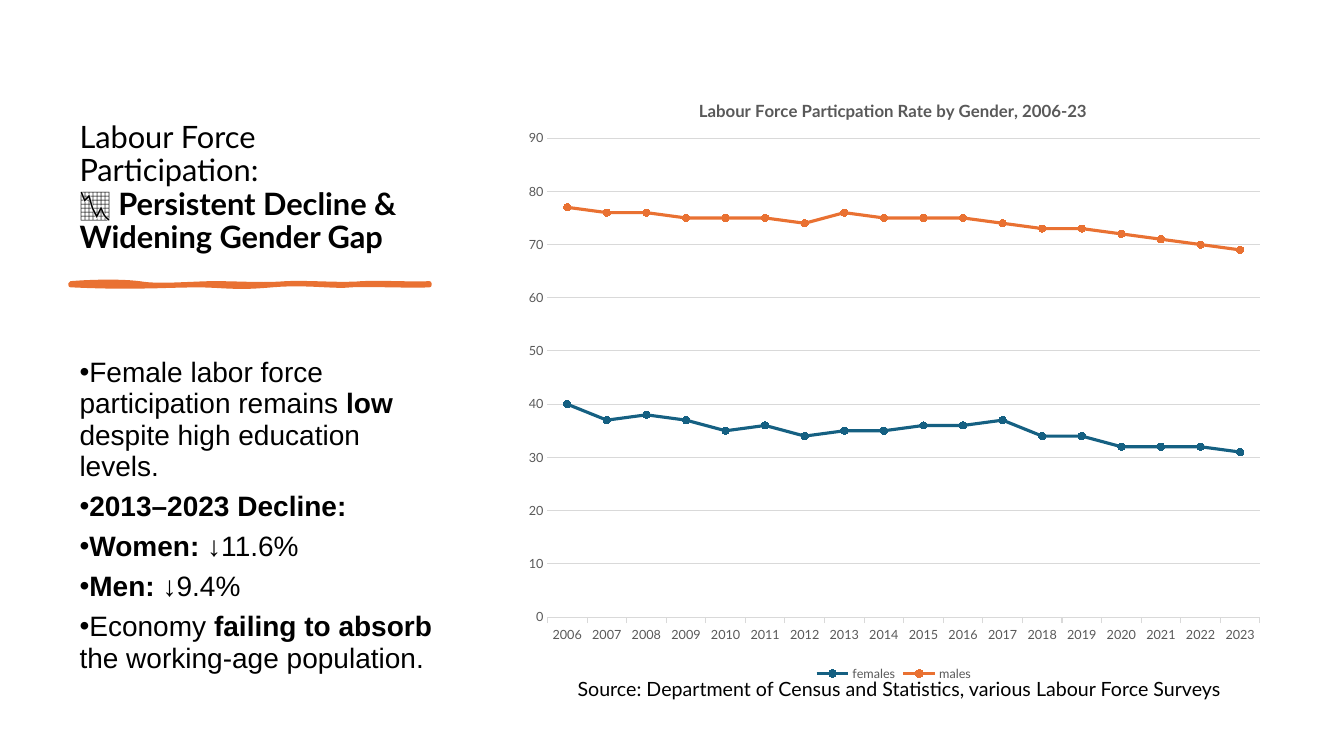
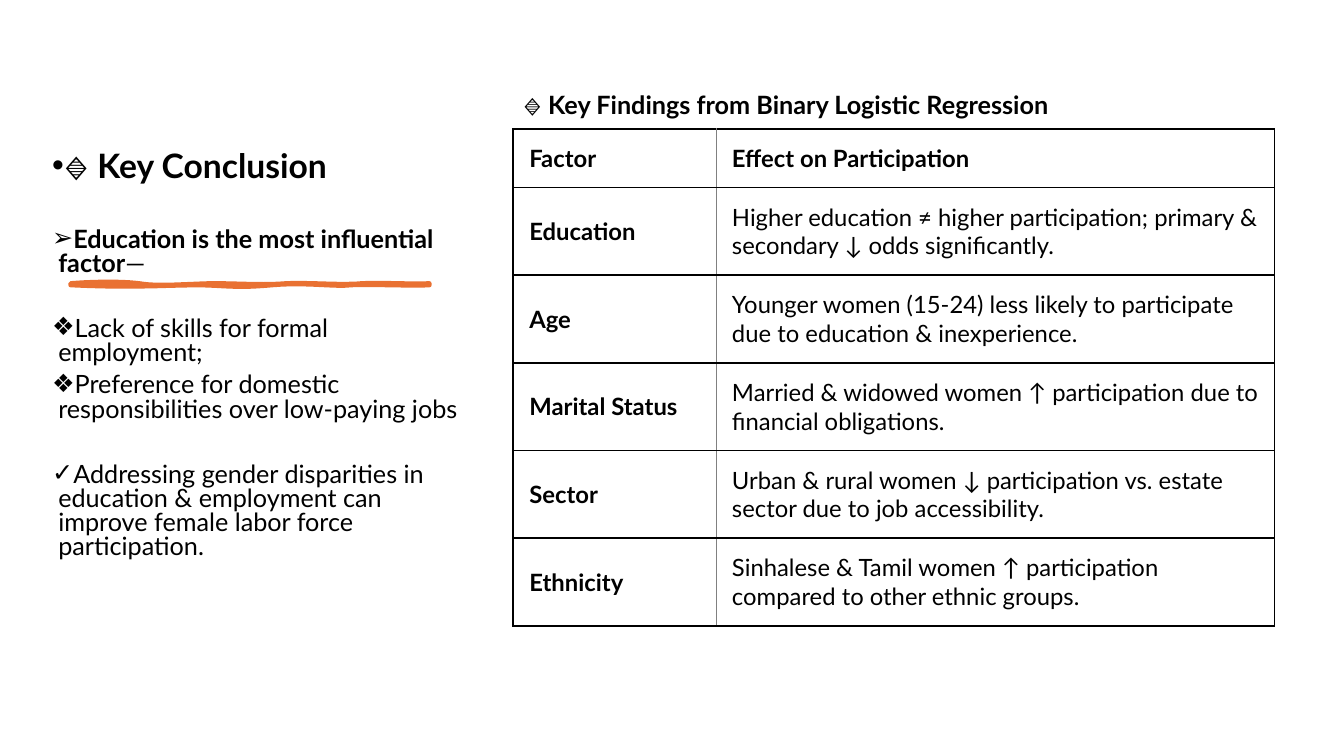
from lxml import etree
from pptx import Presentation
from pptx.chart.data import CategoryChartData
from pptx.dml.color import RGBColor
from pptx.enum.chart import XL_CHART_TYPE as ChartType, XL_LEGEND_POSITION as LegendPos
from pptx.enum.chart import XL_MARKER_STYLE as Marker, XL_TICK_MARK as Tick
from pptx.enum.text import MSO_ANCHOR as Anchor
from pptx.oxml import parse_xml
from pptx.oxml.ns import nsdecls, qn
from pptx.util import Inches, Pt

FONT, BODY_FONT = "Lato", "Arial"
BLACK, GREY, GRID = "000000", "595959", "D9D9D9"
ORANGE, BLUE, DIVIDER = "E97132", "156082", "808080"

# Asterisks switch bold on and off; a newline is a line break.
PARTICIPATION_TITLE = ("Labour Force Participation: \n📉 "
                       "*Persistent Decline & Widening Gender Gap*")
PARTICIPATION_POINTS = [
    "Female labor force participation remains *low* despite high education levels.",
    "*2013–2023 Decline:*",
    "*Women:* ↓11.6%",
    "*Men:* ↓9.4%",
    "Economy *failing to absorb* the working-age population.",
]
CHART_TITLE = "Labour Force Particpation Rate by Gender, 2006-23"
YEARS = [str(year) for year in range(2006, 2024)]
RATES = [
    ("females", BLUE, [40, 37, 38, 37, 35, 36, 34, 35, 35, 36, 36, 37, 34, 34, 32, 32, 32, 31]),
    ("males", ORANGE, [77, 76, 76, 75, 75, 75, 74, 76, 75, 75, 75, 74, 73, 73, 72, 71, 70, 69]),
]
SOURCE = "Source: Department of Census and Statistics, various Labour Force Surveys"

FINDINGS_TITLE = "🔹 *Key Findings from Binary Logistic Regression*"
# text, bullet, size, left margin, first-line indent, space before
CONCLUSIONS = [
    ("🔹 *Key Conclusion*", "•", 24, 0, -0.25, 0),
    ("*Education is the most influential factor*—", "➢", 18, 0.06, -0.31, 25),
    ("Lack of skills for formal employment;", "❖", 18, 0.06, -0.31, 23),
    ("Preference for domestic responsibilities over low-paying jobs", "❖", 18, 0.06, -0.31, 0),
    ("Addressing gender disparities in education & employment can improve "
     "female labor force participation.", "✓", 18, 0.06, -0.31, 23),
]
FINDINGS = [
    ("Factor", "Effect on Participation"),
    ("Education", "Higher education ≠ higher participation; primary & secondary ↓ odds significantly."),
    ("Age", "Younger women (15-24) less likely to participate due to education & inexperience."),
    ("Marital Status", "Married & widowed women ↑ participation due to financial obligations."),
    ("Sector", "Urban & rural women ↓ participation vs. estate sector due to job accessibility."),
    ("Ethnicity", "Sinhalese & Tamil women ↑ participation compared to other ethnic groups."),
]
COL_WIDTHS = (2.01, 5.54)
HEADER_HEIGHT, ROW_HEIGHT = 0.58, 0.87

# Brush stroke: a start point, then cubic curves (two controls and an end)
STROKE_START = (0.7, 2.81)
STROKE_CURVES = [
    ((0.97, 2.79), (1.21, 2.79), (1.38, 2.81)),
    ((1.55, 2.84), (1.77, 2.82), (2.09, 2.81)),
    ((2.41, 2.81), (2.6, 2.83), (2.84, 2.81)),
    ((3.08, 2.8), (3.39, 2.83), (3.59, 2.81)),
    ((3.79, 2.8), (4.12, 2.82), (4.26, 2.81)),
    ((4.26, 2.82), (4.26, 2.83), (4.26, 2.83)),
    ((4.08, 2.84), (3.64, 2.82), (3.48, 2.83)),
    ((3.32, 2.85), (3.04, 2.8), (2.7, 2.83)),
    ((2.35, 2.86), (2.31, 2.84), (1.99, 2.83)),
    ((1.66, 2.83), (1.32, 2.86), (0.7, 2.83)),
]


def rgb(color):
    return RGBColor.from_string(color)


def box(values):
    return [Inches(v) for v in values]


def style_font(font, size, color=BLACK, bold=False, name=FONT):
    font.name, font.size, font.bold = name, Pt(size), bold
    font.color.rgb = rgb(color)


def write(p, text, size, name=FONT, spacing=None):
    """Fill a paragraph; asterisks toggle bold, newlines break the line."""
    if spacing:
        p.line_spacing = spacing
    for i, part in enumerate(text.split("*")):
        for j, line in enumerate(part.split("\n")):
            if j:
                p.add_line_break()
            if line:
                r = p.add_run()
                r.text = line
                style_font(r.font, size, bold=i % 2 == 1, name=name)


def set_bullet(p, char, margin=0, indent=0):
    pPr = p._p.get_or_add_pPr()
    pPr.set("marL", str(Inches(margin)))
    pPr.set("indent", str(Inches(indent)))
    etree.SubElement(pPr, qn("a:buFont")).set("typeface", "Arial")
    etree.SubElement(pPr, qn("a:buChar")).set("char", char)


def add_text_frame(slide, at, anchor=Anchor.TOP):
    tf = slide.shapes.add_textbox(*box(at)).text_frame
    tf.word_wrap = True
    tf.vertical_anchor = anchor
    return tf


def add_title(slide, text, at, size):
    write(add_text_frame(slide, at, Anchor.BOTTOM).paragraphs[0], text, size, spacing=0.9)


def add_paragraphs(tf, count):
    return [tf.paragraphs[0]] + [tf.add_paragraph() for _ in range(count - 1)]


def curve_points(start, curves, steps=12):
    """Yield points along joined cubic curves, in EMU."""
    for c1, c2, end in curves:
        for k in range(1, steps + 1):
            t = k / steps
            u = 1 - t
            yield tuple(
                Inches(u**3 * a + 3 * u * u * t * b + 3 * u * t * t * c + t**3 * d)
                for a, b, c, d in zip(start, c1, c2, end))
        start = end


def add_brush_stroke(slide):
    builder = slide.shapes.build_freeform(*box(STROKE_START))
    builder.add_line_segments(list(curve_points(STROKE_START, STROKE_CURVES)), close=True)
    sp = builder.convert_to_shape()
    sp.shadow.inherit = False
    sp.fill.solid()
    sp.fill.fore_color.rgb = rgb(ORANGE)
    sp.line.color.rgb = rgb(ORANGE)
    sp.line.width = Pt(3)
    etree.SubElement(sp.line._get_or_add_ln(), qn("a:round"))


def set_layout(element, inner=False, **fractions):
    """Place a chart part by fractions of the chart area."""
    target = '<c:layoutTarget val="inner"/>' if inner else ""
    modes = "".join(f'<c:{k}Mode val="edge"/>' for k in "xy")
    places = "".join(f'<c:{k} val="{v}"/>' for k, v in fractions.items())
    for old in element.findall(qn("c:layout")):
        element.remove(old)
    layout = parse_xml(f'<c:layout {nsdecls("c")}><c:manualLayout>{target}{modes}{places}'
                       "</c:manualLayout></c:layout>")
    tx = element.find(qn("c:tx"))
    element.insert(0 if tx is None else element.index(tx) + 1, layout)


def add_rate_chart(slide, at):
    data = CategoryChartData()
    data.categories = YEARS
    for name, _, values in RATES:
        data.add_series(name, values)
    chart = slide.shapes.add_chart(ChartType.LINE_MARKERS, *box(at), data).chart
    style_font(chart.font, 10)

    chart.has_title = True
    p = chart.chart_title.text_frame.paragraphs[0]
    r = p.add_run()
    r.text = CHART_TITLE
    style_font(r.font, 12, GREY, bold=True)
    set_layout(chart.chart_title._element, x=0.24, y=0.04)
    set_layout(chart._chartSpace.chart.plotArea, inner=True, x=0.045, y=0.11, w=0.936, h=0.779)

    chart.has_legend = True
    chart.legend.position = LegendPos.BOTTOM
    chart.legend.include_in_layout = False
    style_font(chart.legend.font, 9, GREY)

    cat, val = chart.category_axis, chart.value_axis
    for axis in (cat, val):
        style_font(axis.tick_labels.font, 9, GREY)
    cat.major_tick_mark = Tick.OUTSIDE
    val.major_tick_mark = Tick.NONE
    val.minimum_scale, val.maximum_scale, val.major_unit = 0, 90, 10
    val.format.line.fill.background()
    val.has_major_gridlines = True
    for line in (cat.format.line, val.major_gridlines.format.line):
        line.color.rgb = rgb(GRID)
        line.width = Pt(0.75)

    chart.plots[0].vary_by_categories = False
    for series, (_, color, _) in zip(chart.plots[0].series, RATES):
        series.smooth = False
        series.format.line.color.rgb = rgb(color)
        series.format.line.width = Pt(2.25)
        series.marker.style, series.marker.size = Marker.CIRCLE, 5
        series.marker.format.fill.solid()
        series.marker.format.fill.fore_color.rgb = rgb(color)
        series.marker.format.line.color.rgb = rgb(color)


def set_borders(cell, divider_side):
    tcPr = cell._tc.get_or_add_tcPr()
    for i, side in enumerate("LRTB"):
        color, width = (DIVIDER, 0.5) if side == divider_side else (BLACK, 1.5)
        tcPr.insert(i, parse_xml(
            f'<a:ln{side} {nsdecls("a")} w="{Pt(width)}"><a:solidFill>'
            f'<a:srgbClr val="{color}"/></a:solidFill></a:ln{side}>'))


def add_findings_table(slide, left, top):
    heights = [HEADER_HEIGHT] + [ROW_HEIGHT] * (len(FINDINGS) - 1)
    at = box((left, top, sum(COL_WIDTHS), sum(heights)))
    table = slide.shapes.add_table(len(FINDINGS), len(COL_WIDTHS), *at).table
    table.horz_banding = False
    for col, width in zip(table.columns, COL_WIDTHS):
        col.width = Inches(width)
    for i, (row, height) in enumerate(zip(table.rows, heights)):
        row.height = Inches(height)
        for j, cell in enumerate(row.cells):
            cell.fill.background()
            cell.vertical_anchor = Anchor.MIDDLE
            cell.margin_left = Inches(0.16)
            cell.margin_top = cell.margin_right = cell.margin_bottom = Inches(0.12)
            bold = i == 0 or j == 0
            text = FINDINGS[i][j]
            write(cell.text_frame.paragraphs[0], f"*{text}*" if bold else text, 17)
            set_borders(cell, "RL"[j])


def build_participation(slide):
    add_title(slide, PARTICIPATION_TITLE, (0.69, 0.7, 3.75, 1.88), 22)
    add_brush_stroke(slide)
    tf = add_text_frame(slide, (0.69, 3.49, 3.75, 3.31))
    for p, text in zip(add_paragraphs(tf, len(PARTICIPATION_POINTS)), PARTICIPATION_POINTS):
        write(p, text, 20, BODY_FONT, spacing=0.94)
        p.space_after = Pt(6)
        set_bullet(p, "•")
    add_rate_chart(slide, (5.09, 0.7, 7.55, 6.1))
    write(add_text_frame(slide, (5.63, 6.67, 6.86, 0.34)).paragraphs[0], SOURCE, 14)


def build_findings(slide):
    add_title(slide, FINDINGS_TITLE, (5.09, 0.71, 6.43, 0.53), 18)
    add_brush_stroke(slide)
    tf = add_text_frame(slide, (0.42, 1.47, 4.26, 4.56))
    for p, item in zip(add_paragraphs(tf, len(CONCLUSIONS)), CONCLUSIONS):
        text, bullet, size, margin, indent, before = item
        write(p, text, size, spacing=0.8)
        p.space_before, p.space_after = Pt(before), Pt(6)
        set_bullet(p, bullet, margin, indent)
    add_findings_table(slide, 5.09, 1.28)


def main():
    prs = Presentation()
    prs.slide_width, prs.slide_height = Inches(13.33), Inches(7.5)
    for build in (build_participation, build_findings):
        build(prs.slides.add_slide(prs.slide_layouts[6]))
    prs.save("out.pptx")


if __name__ == "__main__":
    main()
